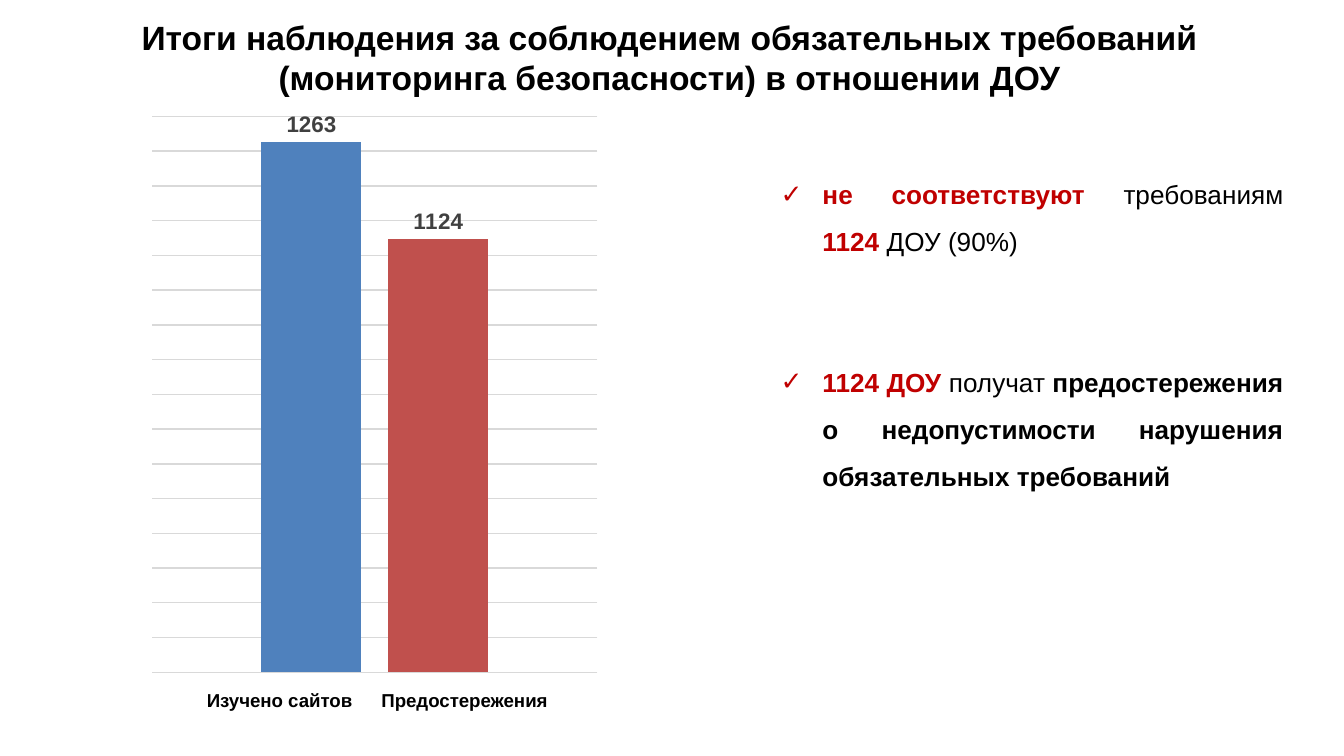
from lxml import etree
from pptx import Presentation
from pptx import util as u
from pptx.chart.data import CategoryChartData
from pptx.dml.color import RGBColor
from pptx.enum import chart as charts
from pptx.enum import text
from pptx.oxml import ns

FONT = "Arial"
BLACK, RED, GRAY, GRID = "000000", "C00000", "404040", "D9D9D9"
LABEL_TOP, LABEL_HEIGHT = 12.88, 0.69


def colour(value):
    """Turn a hex string into a colour."""
    return RGBColor.from_string(value)


def style_font(font, size=14, bold=False, color=BLACK):
    """Set the typeface, size, weight and colour of a font."""
    font.name, font.size, font.bold = FONT, u.Pt(size), bold
    font.color.rgb = colour(color)


def add_text(para, content, **style):
    """Append a formatted span to a paragraph."""
    span = para.add_run()
    span.text = content
    style_font(span.font, **style)


def place(box, left, top, width, height):
    """Move and size a box, with lengths in centimetres."""
    box.left, box.top = u.Cm(left), u.Cm(top)
    box.width, box.height = u.Cm(width), u.Cm(height)


def add_element(parent, tag, **attributes):
    """Append an XML element with the given attributes."""
    return etree.SubElement(parent, ns.qn(tag), **attributes)


def add_title(page, content):
    """Fill the title placeholder."""
    box = page.shapes.title
    place(box, 1.9, 0.15, 21.51, 1.85)
    frame = box.text_frame
    frame.auto_size = text.MSO_AUTO_SIZE.NONE
    frame.vertical_anchor = text.MSO_ANCHOR.MIDDLE
    para = frame.paragraphs[0]
    para.alignment = text.PP_ALIGN.CENTER
    add_text(para, content, size=18, bold=True)


def add_bullet(para):
    """Give a paragraph a red check mark and a hanging indent."""
    props = para._p.get_or_add_pPr()
    props.set("marL", str(u.Cm(0.79)))
    props.set("indent", str(-u.Cm(0.79)))
    add_element(add_element(props, "a:buClr"), "a:srgbClr", val=RED)
    add_element(props, "a:buFont", typeface=FONT)
    add_element(props, "a:buChar", char="✓")


def add_list(page, items):
    """Fill the body placeholder with justified check-marked items."""
    box = page.placeholders[1]
    place(box, 14.5, 2.95, 10.01, 9.12)
    frame = box.text_frame
    frame.auto_size = text.MSO_AUTO_SIZE.NONE
    for index, spans in enumerate(items):
        para = frame.add_paragraph() if index else frame.paragraphs[0]
        add_bullet(para)
        para.alignment = text.PP_ALIGN.JUSTIFY
        para.line_spacing = 1.5
        para.space_before = u.Pt(50 if index else 0)
        for content, bold, color in spans:
            add_text(para, content, bold=bold, color=color)


def set_plot_area(chart, **fractions):
    """Fix the inner plot area as fractions of the chart."""
    area = chart._chartSpace.chart.plotArea
    for old in area.findall(ns.qn("c:layout")):
        area.remove(old)
    layout = etree.Element(ns.qn("c:layout"))
    area.insert(0, layout)
    manual = add_element(layout, "c:manualLayout")
    add_element(manual, "c:layoutTarget", val="inner")
    for side in "xy":
        add_element(manual, f"c:{side}Mode", val="edge")
    for name, value in fractions.items():
        add_element(manual, f"c:{name}", val=str(value))


def add_column_chart(page, columns):
    """Draw one labelled column per value and colour pair."""
    data = CategoryChartData()
    data.categories = ["1"]
    for number, (value, _) in enumerate(columns, 1):
        data.add_series(f"Series {number}", [value])
    frame = page.shapes.add_chart(
        charts.XL_CHART_TYPE.COLUMN_CLUSTERED,
        u.Cm(2.49), u.Cm(1.85), u.Cm(9.19), u.Cm(11.28), data)
    chart = frame.chart
    chart.has_legend = chart.has_title = False
    style_font(chart.font, size=10)
    set_plot_area(chart, x=0.042, y=0.031, w=0.916, h=0.931)

    axis = chart.value_axis
    axis.minimum_scale, axis.maximum_scale, axis.major_unit = 500, 1300, 50
    line = axis.major_gridlines.format.line
    line.color.rgb, line.width = colour(GRID), u.Pt(0.75)
    axis.visible = chart.category_axis.visible = False

    plot = chart.plots[0]
    plot.gap_width, plot.overlap, plot.vary_by_categories = 219, -27, False
    for series, (_, color) in zip(plot.series, columns):
        series.format.fill.solid()
        series.format.fill.fore_color.rgb = colour(color)
        labels = series.data_labels
        labels.show_value = True
        labels.position = charts.XL_LABEL_POSITION.OUTSIDE_END
        style_font(labels.font, size=12, bold=True, color=GRAY)


def add_label(page, content, left, width):
    """Add a bold caption under a column."""
    box = page.shapes.add_textbox(0, 0, 0, 0)
    place(box, left, LABEL_TOP, width, LABEL_HEIGHT)
    box.text_frame.word_wrap = True
    add_text(box.text_frame.paragraphs[0], content, size=10, bold=True)


def main():
    """Build the monitoring results slide."""
    deck = Presentation()
    deck.slide_width, deck.slide_height = u.Cm(25.4), u.Cm(14.28)
    page = deck.slides.add_slide(deck.slide_layouts[1])
    add_title(page, "Итоги наблюдения за соблюдением обязательных требований "
                    "(мониторинга безопасности) в отношении ДОУ")
    add_list(page, [
        [("не соответствуют ", True, RED), ("требованиям ", False, BLACK),
         ("1124", True, RED), (" ДОУ (90%)", False, BLACK)],
        [("1124 ДОУ ", True, RED), ("получат ", False, BLACK),
         ("предостережения о недопустимости нарушения "
          "обязательных требований", True, BLACK)],
    ])
    add_column_chart(page, [(1263, "4F81BD"), (1124, "C0504D")])
    add_label(page, "Изучено сайтов", 3.66, 3.4)
    add_label(page, "Предостережения", 6.96, 4.01)
    deck.save("out.pptx")


if __name__ == "__main__":
    main()
